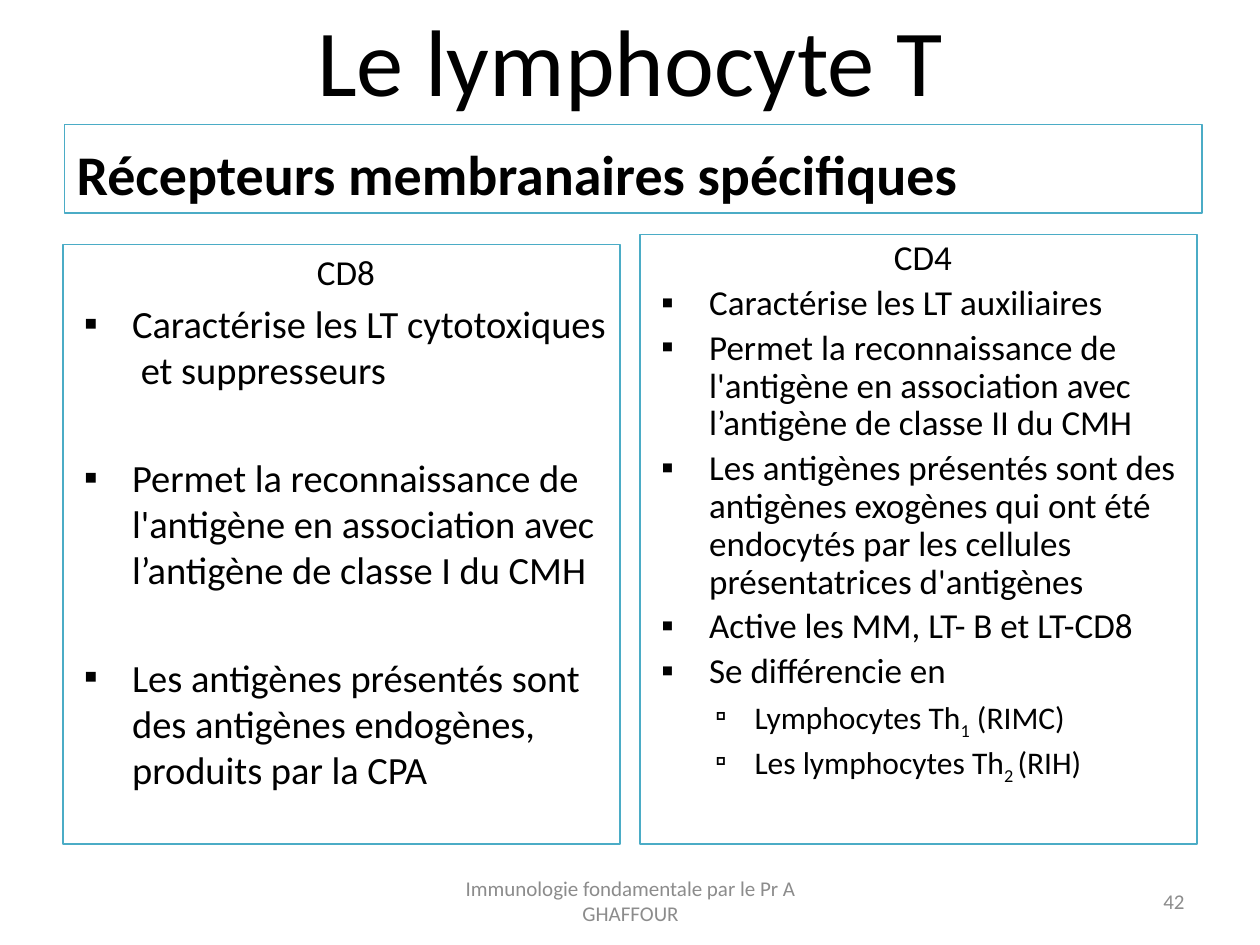
import pptx
import pptx.util
import pptx.dml.color
import pptx.enum.shapes
import pptx.enum.text
from lxml import etree
from pptx.oxml.ns import qn

Inches, Pt = pptx.util.Inches, pptx.util.Pt
RGBColor = pptx.dml.color.RGBColor
ALIGN = pptx.enum.text.PP_ALIGN
ANCHOR = pptx.enum.text.MSO_ANCHOR

BLACK = RGBColor(0x00, 0x00, 0x00)
GREY = RGBColor(0x8C, 0x8C, 0x8C)
TEAL = RGBColor(0x4B, 0xAC, 0xC6)
FONT = "Calibri"

WIDTH, HEIGHT = 10, 7.5
MARGIN = 0.5
COLUMN_WIDTH = 4.42
RIGHT_COLUMN = WIDTH - MARGIN - COLUMN_WIDTH
COLUMN_BOTTOM = 6.7
FOOTER_TOP, FOOTER_HEIGHT = 6.95, 0.4

# Left margin and hanging indent of each list level, with its bullet
LEVELS = [(0.45, -0.38, "▪"), (0.81, -0.31, "▫")]

CD8_ITEMS = [
    "Caractérise les LT cytotoxiques  et suppresseurs",
    "Permet la reconnaissance de l'antigène en association avec "
    "l’antigène de classe I du CMH",
    "Les antigènes présentés sont des antigènes endogènes, produits par la CPA",
]
CD4_ITEMS = [
    "Caractérise les LT auxiliaires",
    "Permet la reconnaissance de l'antigène en association avec "
    "l’antigène de classe II du CMH",
    "Les antigènes présentés sont des antigènes exogènes qui ont été endocytés "
    "par les cellules présentatrices d'antigènes",
    "Active les MM, LT- B et LT-CD8",
    "Se différencie en",
]
# Text before, in and after the subscript
CD4_SUBTYPES = [
    ("Lymphocytes Th", "1", " (RIMC)"),
    ("Les lymphocytes Th", "2 ", "(RIH)"),
]


def style_runs(paragraph, size, color=BLACK, bold=False):
    for run in paragraph.runs:
        run.font.name = FONT
        run.font.size = Pt(size)
        run.font.bold = bold
        run.font.color.rgb = color


def set_text(shape, text, size, align, anchor, color=BLACK, bold=False):
    frame = shape.text_frame
    frame.word_wrap = True
    frame.vertical_anchor = anchor
    paragraph = frame.paragraphs[0]
    paragraph.text = text
    paragraph.alignment = align
    style_runs(paragraph, size, color, bold)


def add_label(slide, box, *text_options):
    shape = slide.shapes.add_textbox(*map(Inches, box))
    set_text(shape, *text_options)


def add_panel(slide, box):
    shape = slide.shapes.add_shape(
        pptx.enum.shapes.MSO_SHAPE.RECTANGLE, *map(Inches, box))
    shape.shadow.inherit = False
    shape.fill.background()
    shape.line.color.rgb = TEAL
    shape.line.width = Pt(0.75)
    return shape


def set_indent(paragraph, level, bullet=True):
    left, hanging, character = LEVELS[level]
    paragraph.level = level
    properties = paragraph._p.get_or_add_pPr()
    properties.set("marL", str(Inches(left)))
    properties.set("indent", str(Inches(hanging)))
    if bullet:
        etree.SubElement(properties, qn("a:buFont")).set("typeface", FONT)
        etree.SubElement(properties, qn("a:buChar")).set("char", character)


def add_item(frame, parts, size, space_before, line_spacing, level=0):
    paragraph = frame.add_paragraph()
    paragraph.alignment = ALIGN.LEFT
    paragraph.line_spacing = line_spacing
    paragraph.space_before = Pt(space_before)
    set_indent(paragraph, level)
    for part in parts:
        paragraph.add_run().text = part
    style_runs(paragraph, size)
    for run in paragraph.runs[1:2]:
        run.font._element.set("baseline", "-25000")


def add_column(slide, left, top, heading, line_spacing):
    shape = add_panel(slide, (left, top, COLUMN_WIDTH, COLUMN_BOTTOM - top))
    set_text(shape, heading, 20, ALIGN.CENTER, ANCHOR.TOP)
    paragraph = shape.text_frame.paragraphs[0]
    paragraph.line_spacing = line_spacing
    set_indent(paragraph, 0, bullet=False)
    return shape.text_frame


def main():
    presentation = pptx.Presentation()
    presentation.slide_width = Inches(WIDTH)
    presentation.slide_height = Inches(HEIGHT)
    slide = presentation.slides.add_slide(presentation.slide_layouts[6])

    # Title above the section heading
    add_label(slide, (MARGIN, 0, WIDTH - 2 * MARGIN, 0.94),
              "Le lymphocyte T", 54, ALIGN.CENTER, ANCHOR.MIDDLE)
    banner = add_panel(slide, (0.51, 0.99, 9.03, 0.7))
    set_text(banner, "Récepteurs membranaires spécifiques", 32,
             ALIGN.LEFT, ANCHOR.BOTTOM, BLACK, True)

    # CD8 column: widely spaced items
    frame = add_column(slide, MARGIN, 1.94, "CD8", 1.0)
    for index, item in enumerate(CD8_ITEMS):
        add_item(frame, [item], 22, 35 if index else 4.4, 1.0)

    # CD4 column: tight items and two subtypes
    frame = add_column(slide, RIGHT_COLUMN, 1.86, "CD4", 0.9)
    for item in CD4_ITEMS:
        add_item(frame, [item], 20, 4, 0.9)
    for parts in CD4_SUBTYPES:
        add_item(frame, parts, 18, 4, 0.9, level=1)

    # Footer and slide number
    add_label(slide, (3.42, FOOTER_TOP, 3.17, FOOTER_HEIGHT),
              "Immunologie fondamentale par le Pr A GHAFFOUR", 12,
              ALIGN.CENTER, ANCHOR.MIDDLE, GREY)
    add_label(slide, (7.17, FOOTER_TOP, 2.33, FOOTER_HEIGHT),
              "42", 12, ALIGN.RIGHT, ANCHOR.MIDDLE, GREY)

    presentation.save("out.pptx")


if __name__ == "__main__":
    main()
